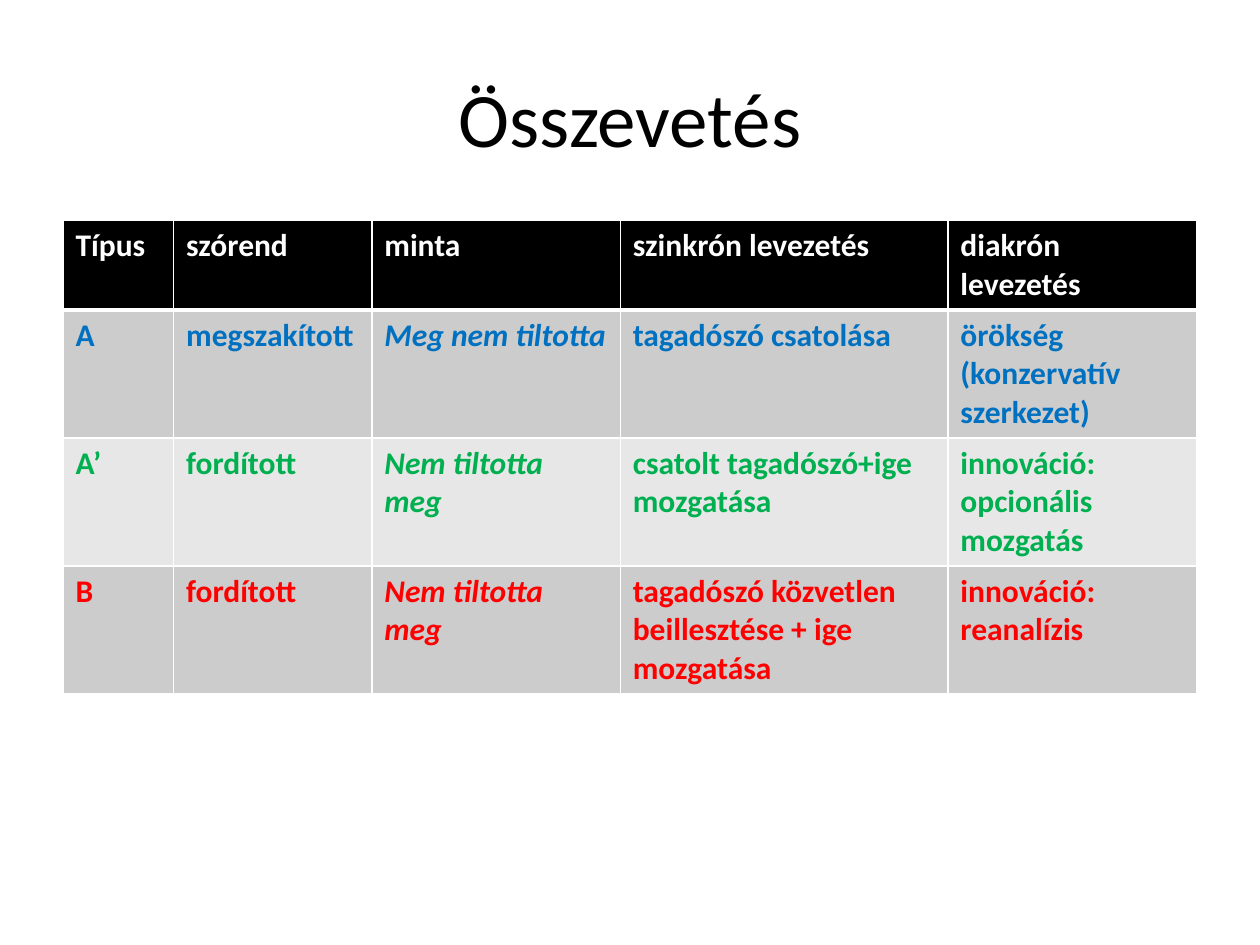
"""Build a slide with a table comparing three word-order types."""
from lxml.etree import SubElement
from pptx import Presentation
from pptx.dml.color import RGBColor
from pptx.enum.text import MSO_ANCHOR, PP_ALIGN
from pptx.oxml.ns import qn
from pptx.util import Pt

COLORS = {
    "black": "000000", "white": "FFFFFF", "blue": "0070C0", "green": "00B050",
    "red": "FF0000", "dark band": "CCCCCC", "light band": "E7E7E7",
}
ROWS = [
    ("white", "black", ["Típus", "szórend", "minta", "szinkrón levezetés", "diakrón levezetés"]),
    ("blue", "dark band", ["A", "megszakított", "Meg nem tiltotta", "tagadószó csatolása",
                           "örökség\v(konzervatív szerkezet)"]),
    ("green", "light band", ["A’", "fordított", "Nem tiltotta meg", "csatolt tagadószó+ige mozgatása",
                             "innováció: opcionális mozgatás"]),
    ("red", "dark band", ["B", "fordított", "Nem tiltotta meg",
                          "tagadószó közvetlen beillesztése + ige mozgatása",
                          "innováció:\vreanalízis"]),
]
COLUMN_WIDTHS = [63.2, 113.3, 142, 187.2, 142.3]
ROW_HEIGHTS = [50.4, 72, 72, 72]
EXAMPLE_COLUMN = 2


def format_text(text_frame, color, formats):
    for paragraph in text_frame.paragraphs:
        for run in paragraph.runs:
            run.font.color.rgb = RGBColor.from_string(COLORS[color])
            for name, value in formats.items():
                setattr(run.font, name, value)


def add_borders(cell, widths):
    properties = cell._tc.get_or_add_tcPr()
    for side, width in widths.items():
        line = SubElement(properties, qn(f"a:ln{side}"), w=str(Pt(width)))
        fill = SubElement(line, qn("a:solidFill"))
        SubElement(fill, qn("a:srgbClr"), val=COLORS["white"])


presentation = Presentation()
presentation.slide_width, presentation.slide_height = Pt(720), Pt(540)
slide = presentation.slides.add_slide(presentation.slide_layouts[5])

title = slide.shapes.title
for name, value in {"left": 36, "top": 21.6, "width": 648, "height": 90}.items():
    setattr(title, name, Pt(value))
title.text_frame.text = "Összevetés"
title.text_frame.vertical_anchor = MSO_ANCHOR.MIDDLE
title.text_frame.paragraphs[0].alignment = PP_ALIGN.CENTER
format_text(title.text_frame, "black", {"name": "Calibri", "size": Pt(44)})

table = slide.shapes.add_table(
    len(ROWS), len(COLUMN_WIDTHS), Pt(36), Pt(126), Pt(648), Pt(sum(ROW_HEIGHTS))
).table
for column, width in zip(table.columns, COLUMN_WIDTHS):
    column.width = Pt(width)
for row, height in zip(table.rows, ROW_HEIGHTS):
    row.height = Pt(height)

for row_index, (text_color, fill_color, texts) in enumerate(ROWS):
    borders = {"L": 1, "R": 1, "T": 3 if row_index == 1 else 1, "B": 3 if row_index == 0 else 1}
    for column_index, text in enumerate(texts):
        cell = table.cell(row_index, column_index)
        add_borders(cell, borders)
        cell.fill.solid()
        cell.fill.fore_color.rgb = RGBColor.from_string(COLORS[fill_color])
        cell.text_frame.text = text
        format_text(cell.text_frame, text_color, {
            "name": "Calibri", "size": Pt(18), "bold": True,
            "italic": row_index > 0 and column_index == EXAMPLE_COLUMN,
        })

presentation.save("out.pptx")
